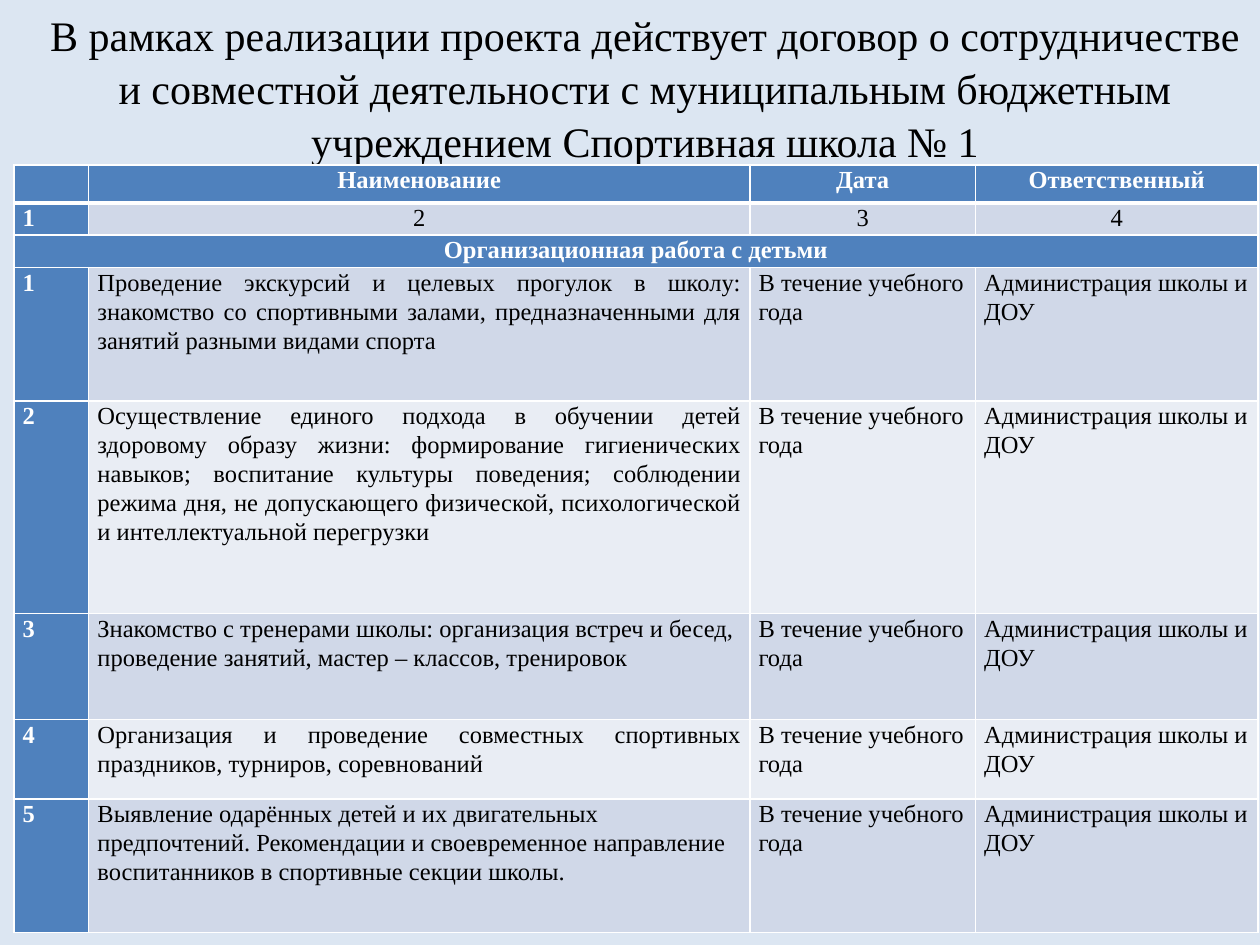
import pptx
import pptx.util
import pptx.dml.color
import pptx.enum.text
import pptx.oxml
from pptx.util import Pt

FONT = "Times New Roman"
BLUE, DARK_BAND, LIGHT_BAND = "4F81BD", "D0D8E8", "E9EDF4"
WHITE, BLACK = "FFFFFF", "000000"
ALIGN = pptx.enum.text.PP_ALIGN
LEFT, CENTER, JUSTIFY = ALIGN.LEFT, ALIGN.CENTER, ALIGN.JUSTIFY


def rgb(value):
    return pptx.dml.color.RGBColor.from_string(value)


def set_borders(cell, bottom):
    tc_pr = cell._tc.get_or_add_tcPr()
    widths = {"lnL": 1, "lnR": 1, "lnT": 1, "lnB": bottom}
    for i, (tag, width) in enumerate(widths.items()):
        tc_pr.insert(i, pptx.oxml.parse_xml(
            f'<a:{tag} xmlns:a="http://schemas.openxmlformats.org/drawingml/2006/main" '
            f'w="{Pt(width)}"><a:solidFill><a:srgbClr val="{WHITE}"/></a:solidFill></a:{tag}>'))


prs = pptx.Presentation()
prs.slide_width, prs.slide_height = Pt(720), Pt(540)
s = prs.slides.add_slide(prs.slide_layouts[6])
s.background.fill.solid()
s.background.fill.fore_color.rgb = rgb("DCE6F2")

# Title
sp = s.shapes.add_textbox(Pt(17.3), Pt(20.9), Pt(702.7), Pt(56.9))
tf = sp.text_frame
tf.word_wrap = True
tf.vertical_anchor = pptx.enum.text.MSO_ANCHOR.MIDDLE
tf.text = ("В рамках реализации проекта действует договор о сотрудничестве "
           "и совместной деятельности с муниципальным бюджетным "
           "учреждением Спортивная школа № 1")
p = tf.paragraphs[0]
p.alignment = CENTER
p.line_spacing = 1.05
r = p.runs[0]
r.font.name, r.font.size = FONT, Pt(24)
r.font.color.rgb = rgb(BLACK)

# Table contents: activities with the alignment of their text
activities = [
    ("Проведение экскурсий и целевых прогулок в школу: знакомство со спортивными "
     "залами, предназначенными для занятий разными видами спорта", JUSTIFY),
    ("Осуществление единого подхода в обучении детей здоровому образу жизни: "
     "формирование гигиенических навыков; воспитание культуры поведения; "
     "соблюдении режима дня, не допускающего физической, психологической и "
     "интеллектуальной перегрузки", JUSTIFY),
    ("Знакомство с тренерами школы: организация встреч и бесед, проведение "
     "занятий, мастер – классов, тренировок", LEFT),
    ("Организация и проведение совместных спортивных праздников, турниров, "
     "соревнований", JUSTIFY),
    ("Выявление одарённых детей и их двигательных предпочтений. Рекомендации и "
     "своевременное направление воспитанников в спортивные секции школы.", LEFT),
]
rows = [
    ["", "Наименование", "Дата", "Ответственный"],
    ["1", "2", "3", "4"],
    ["Организационная работа с детьми", "", "", ""],
]
for number, (activity, _) in enumerate(activities, 1):
    rows.append([str(number), activity, "В течение учебного года",
                 "Администрация школы и ДОУ"])

# Table grid
col_widths = [42.7, 377.8, 129, 161.5]
row_heights = [21.6, 18.5, 18.5, 76.2, 121.6, 60.5, 45.5, 76.2]
table = s.shapes.add_table(len(rows), len(col_widths), Pt(8), Pt(94.3),
                           Pt(sum(col_widths)), Pt(sum(row_heights))).table
for column, width in zip(table.columns, col_widths):
    column.width = Pt(width)
for row, height in zip(table.rows, row_heights):
    row.height = Pt(height)
table.cell(2, 0).merge(table.cell(2, 3))

# Table cells
for i, row in enumerate(rows):
    for j, text in enumerate(row):
        cell = table.cell(i, j)
        strong = i in (0, 2) or j == 0
        band = DARK_BAND if i % 2 else LIGHT_BAND
        cell.fill.solid()
        cell.fill.fore_color.rgb = rgb(BLUE if strong else band)
        set_borders(cell, 3 if i == 0 else 1)
        cell.margin_left = cell.margin_right = Pt(5)
        cell.margin_top = cell.margin_bottom = 0

        p = cell.text_frame.paragraphs[0]
        p.line_spacing = 1.07
        if not text:
            p._p.get_or_add_endParaRPr().set("sz", "1400")
            continue
        p.text = text
        if i > 2:
            p.alignment = activities[i - 3][1] if j == 1 else LEFT
        else:
            p.alignment = LEFT if (i, j) == (1, 0) else CENTER
        r = p.runs[0]
        r.font.name, r.font.size, r.font.bold = FONT, Pt(14), strong
        r.font.color.rgb = rgb(WHITE if strong else BLACK)

prs.save("out.pptx")
